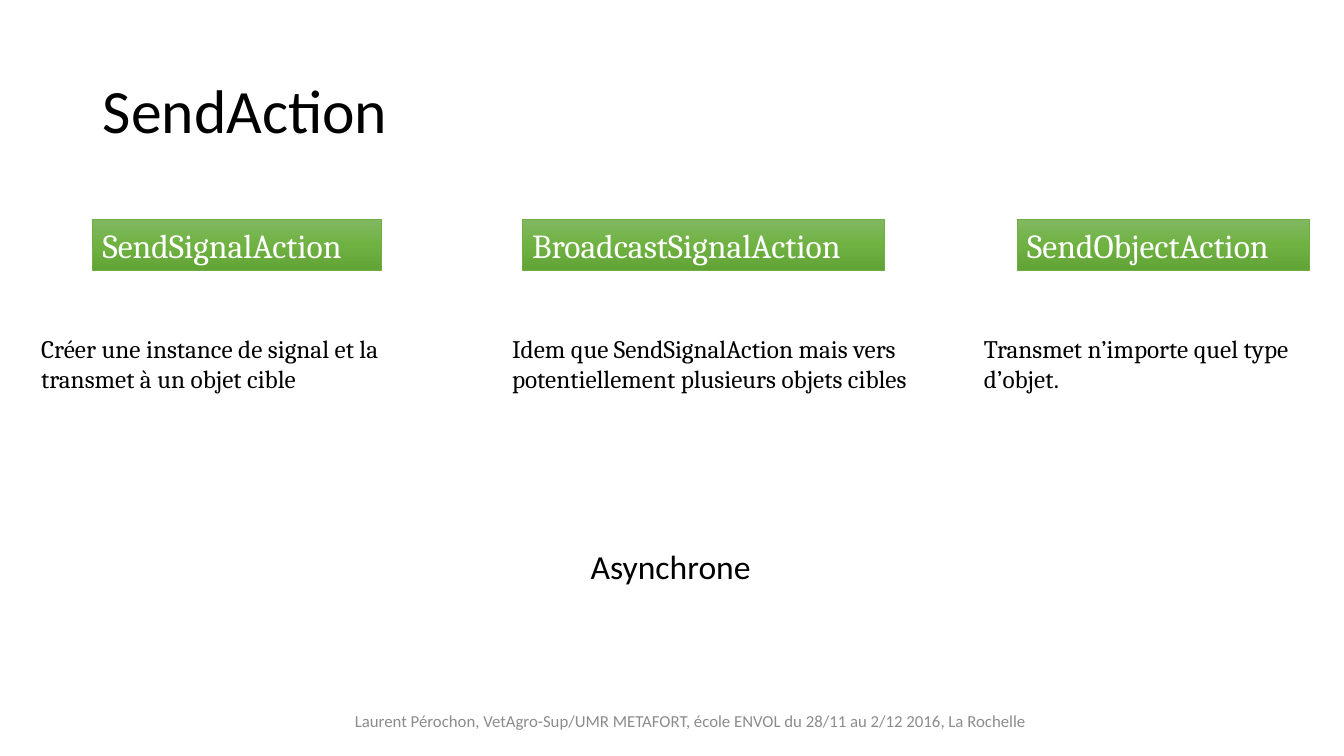
from copy import deepcopy

from pptx import Presentation
from pptx.dml.color import RGBColor
from pptx.enum.shapes import MSO_SHAPE
from pptx.enum.text import MSO_ANCHOR, MSO_AUTO_SIZE, PP_ALIGN
from pptx.oxml.ns import qn
from pptx.util import Inches, Pt

RECT = MSO_SHAPE.RECTANGLE
MIDDLE, TOP = MSO_ANCHOR.MIDDLE, MSO_ANCHOR.TOP
LEFT, CENTER = PP_ALIGN.LEFT, PP_ALIGN.CENTER
GROW, FIXED = MSO_AUTO_SIZE.SHAPE_TO_FIT_TEXT, MSO_AUTO_SIZE.NONE

# Content
TITLE = "SendAction"
FOOTER = ("Laurent Pérochon, VetAgro-Sup/UMR METAFORT, "
          "école ENVOL du 28/11 au 2/12 2016, La Rochelle")
NOTE = "Asynchrone"
# name, (left, width) of its box, description, (left, width, height) of its text
ACTIONS = [
    ("SendSignalAction", (0.92, 2.86),
     "Créer une instance de signal et la transmet à un objet cible",
     (0.31, 4.39, 0.71)),
    ("BroadcastSignalAction", (5.18, 3.59),
     "Idem que SendSignalAction mais vers potentiellement plusieurs objets cibles",
     (4.98, 4.39, 1.01)),
    ("SendObjectAction", (10.09, 2.9),
     "Transmet n’importe quel type d’objet.",
     (9.66, 3.58, 0.71)),
]
GREENS = [(0, "81B861"), (0.5, "6FB242"), (1, "62A336")]
BOX_TOP, BOX_H, TEXT_TOP = 2.18, 0.5, 3.26


def rgb(color):
    return RGBColor.from_string(color)


def write(sp, text, size=18, font="Calibri", color="000000", align=LEFT,
          anchor=TOP, wrap=True, auto=GROW, spacing=None):
    tf = sp.text_frame
    tf.word_wrap, tf.auto_size, tf.vertical_anchor = wrap, auto, anchor
    p = tf.paragraphs[0]
    p.alignment, p.line_spacing = align, spacing
    r = p.add_run()
    r.text = text
    r.font.size, r.font.name = Pt(size), font
    r.font.color.rgb = rgb(color)


def textbox(x, y, w, h, text, **fmt):
    sp = s.shapes.add_textbox(Inches(x), Inches(y), Inches(w), Inches(h))
    write(sp, text, **fmt)


def green_box(x, y, w, h, text):
    sp = s.shapes.add_shape(RECT, Inches(x), Inches(y), Inches(w), Inches(h))
    sp.shadow.inherit = False
    sp.fill.gradient()
    sp.fill.gradient_angle = 270  # light at the top, dark at the bottom
    stops = sp._element.spPr.find(qn("a:gradFill")).find(qn("a:gsLst"))
    stops.insert(1, deepcopy(stops[0]))  # third stop for the middle
    for stop, (position, color) in zip(sp.fill.gradient_stops, GREENS):
        stop.position = position
        stop.color.rgb = rgb(color)
    sp.line.color.rgb = rgb("70AD47")
    sp.line.width = Pt(0.5)
    write(sp, text, size=24, font="Cambria", color="FFFFFF", wrap=False)


prs = Presentation()
prs.slide_width, prs.slide_height = Inches(13.33), Inches(7.5)
s = prs.slides.add_slide(prs.slide_layouts[5])

# Title
title = s.shapes.title
title.left, title.top = Inches(0.92), Inches(0.4)
title.width, title.height = Inches(11.5), Inches(1.45)
write(title, TITLE, size=44, anchor=MIDDLE, auto=FIXED, spacing=0.9)

# Footer
textbox(2.3, 6.95, 9.1, 0.4, FOOTER, size=12, color="8C8C8C",
        align=CENTER, anchor=MIDDLE, auto=FIXED)

# Three kinds of action, each with its description
for name, (box_x, box_w), description, (x, w, h) in ACTIONS:
    green_box(box_x, BOX_TOP, box_w, BOX_H, name)
    textbox(x, TEXT_TOP, w, h, description, font="Cambria")

# Shared property
textbox(5.76, 5.37, 1.81, 0.5, NOTE, size=24, wrap=False)

prs.save("out.pptx")
